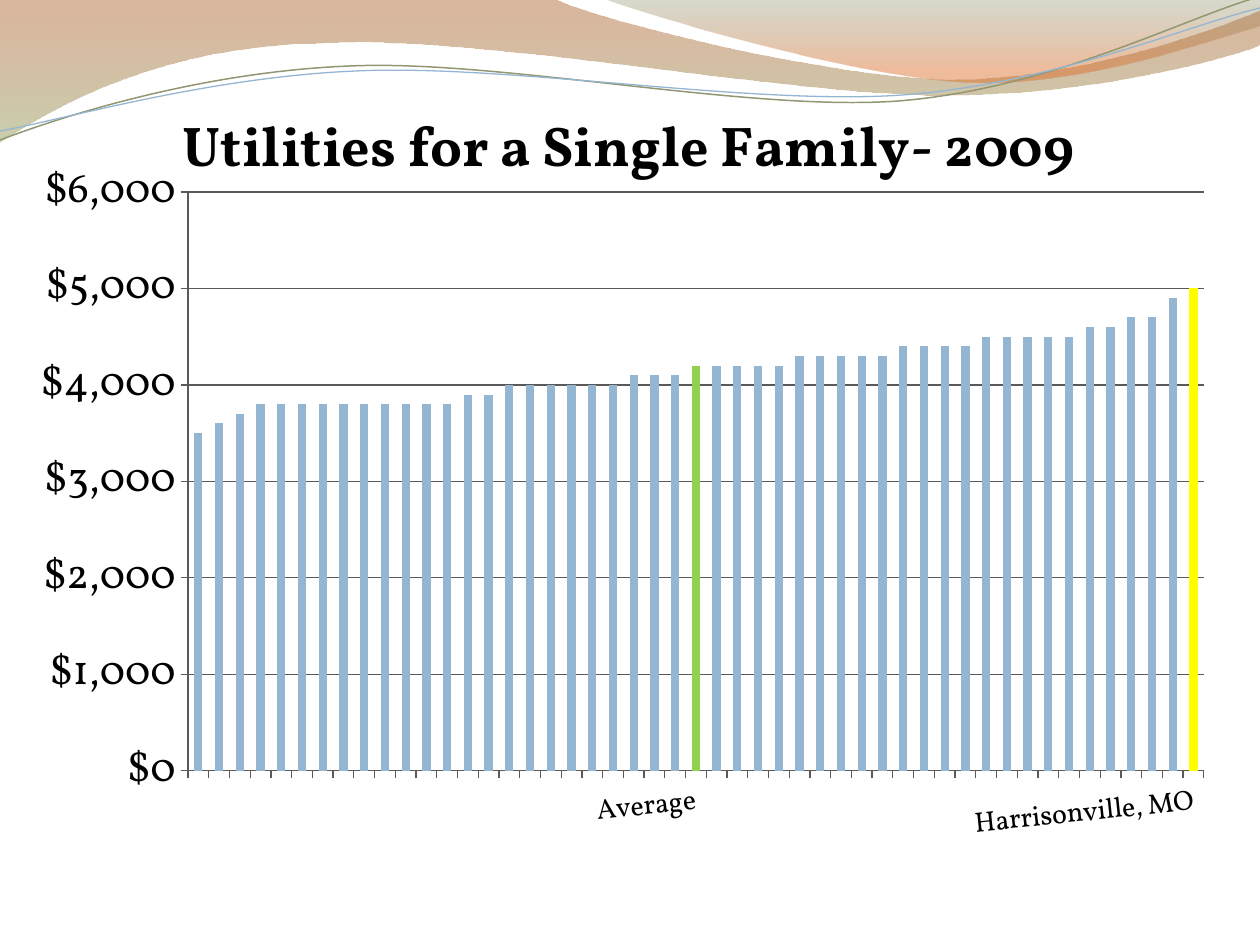
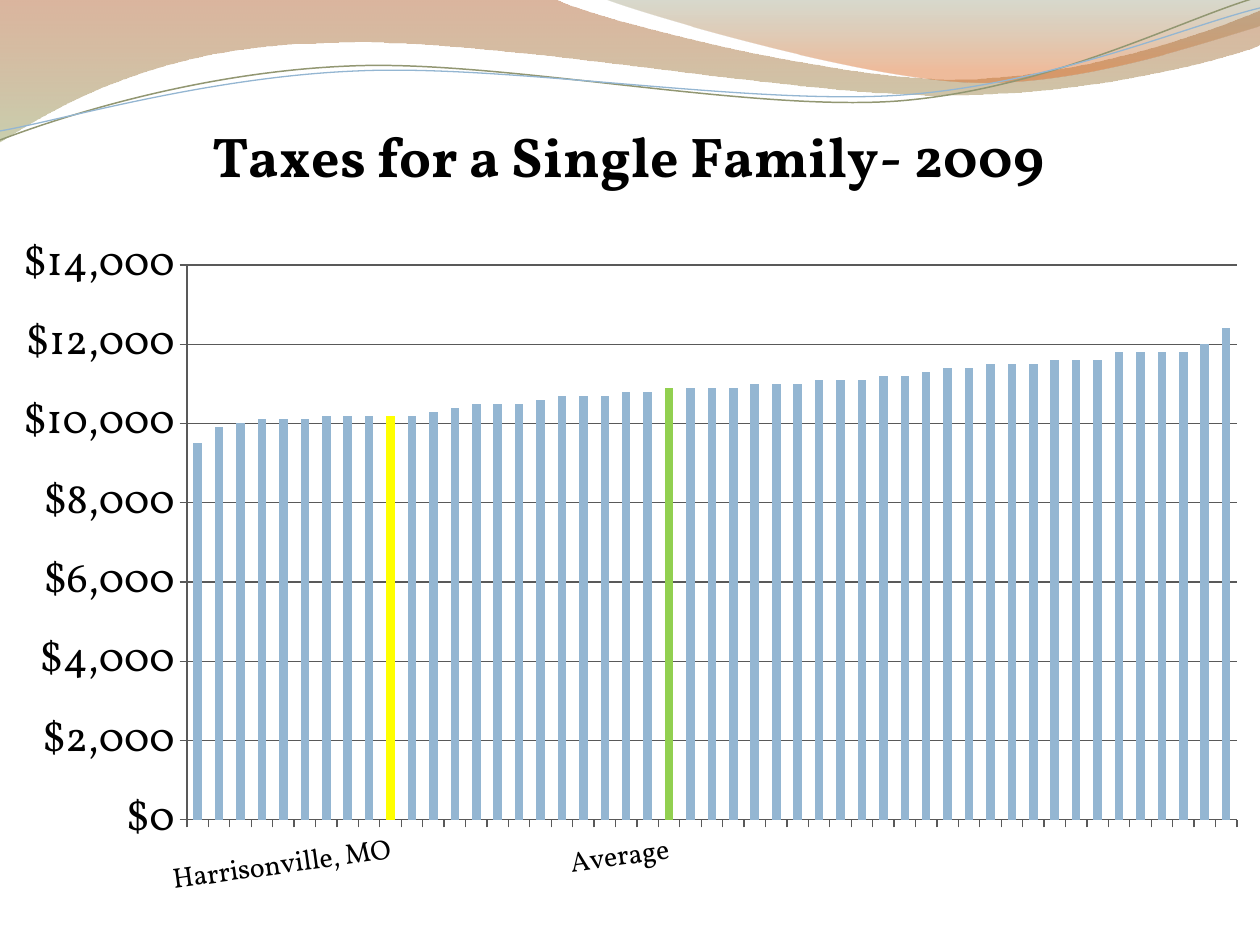
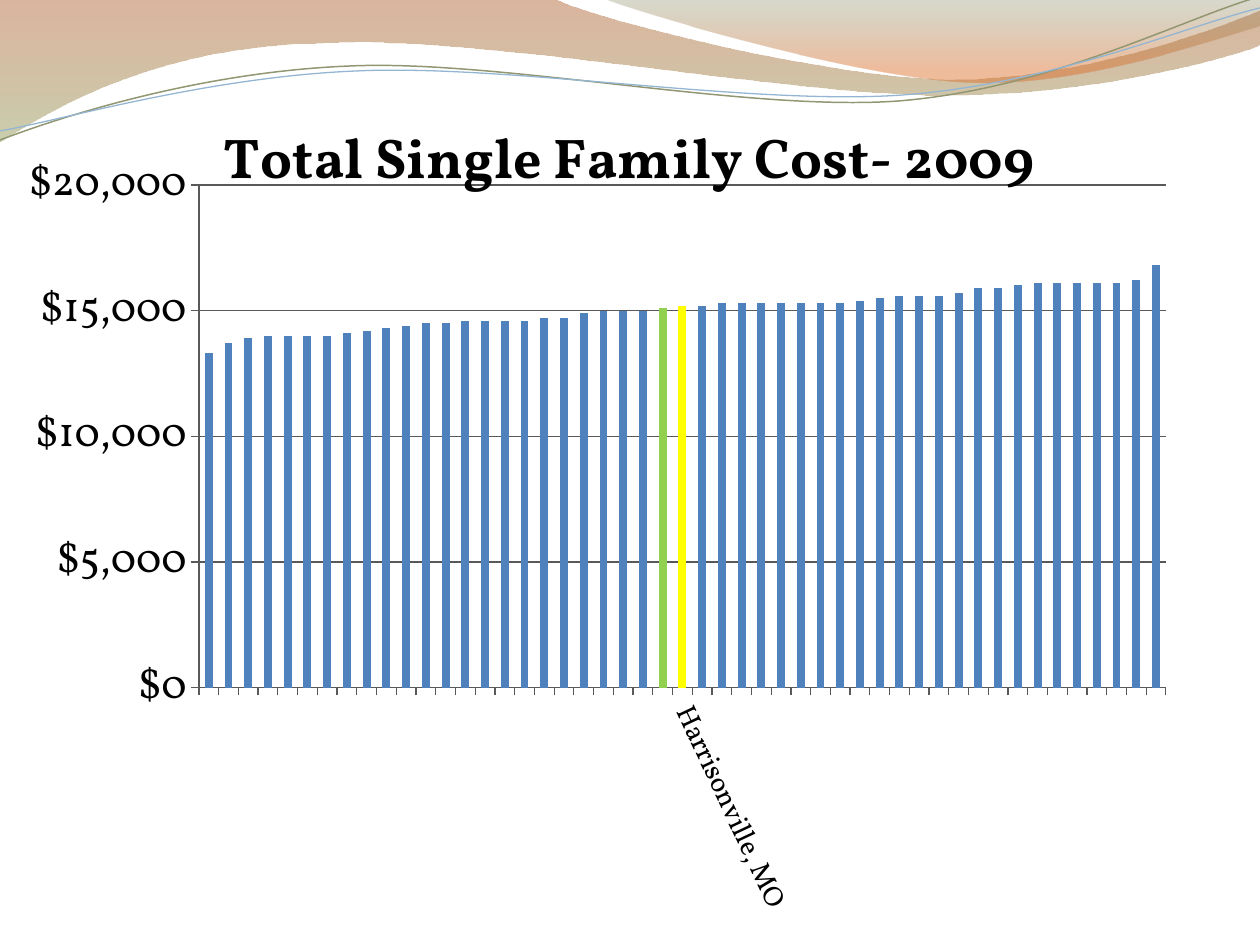
"""Build three household cost slides with a shared wave header."""
from pptx import Presentation
from pptx.chart.data import CategoryChartData
from pptx.dml.color import RGBColor
from pptx.enum.chart import XL_CHART_TYPE as ChartType, XL_TICK_MARK as TickMark
from pptx.oxml import parse_xml
from pptx.oxml.ns import nsdecls, qn
from pptx.oxml.xmlchemy import OxmlElement
from pptx.util import Pt

EMU_PER_PX = 914400 / 126
FONT = "Vollkorn"
BLACK, AXIS = "000000", "595959"
LIGHT_BLUE, BLUE, GREEN, YELLOW = "94B6D2", "4F81BD", "92D050", "FFFF00"
BAR_COUNT = 49
TOWN, AVERAGE = "Harrisonville, MO", "Average"
HIGHLIGHTS = {TOWN: YELLOW, AVERAGE: GREEN}

BANDS = [
    dict(
        start=(0, 0),
        segments=[
            [(554, -1)],
            [(600, 21), (837, 79), (955, 79)],
            [(1075, 79), (1207, 33), (1260, 11)],
            [(1261, 45)],
            [(1239, 55), (1096, 96), (940, 95)],
            [(784, 95), (481, 35), (324, 43)],
            [(163, 45), (58, 105), (-1, 142)],
        ],
        stops=[(0, "AF5C29", 45), (1, "9DA66B", 55)],
    ),
    dict(
        start=(604, -1),
        segments=[
            [(641, 14), (859, 78), (969, 82)],
            [(1079, 87), (1211, 40), (1260, 26)],
            [(1260, 0)],
        ],
        stops=[(0, "7D835B", 30), (0.8, "DD6B24", 45)],
    ),
]
WAVES = [
    dict(
        start=(0, 140),
        segments=[
            [(60, 117), (199, 72), (349, 66)],
            [(498, 59), (747, 112), (898, 101)],
            [(1050, 89), (1182, 19), (1258, -3)],
        ],
        color="929772", width=0.85,
    ),
    dict(
        start=(0, 131),
        segments=[
            [(59, 121), (207, 77), (357, 71)],
            [(508, 64), (752, 106), (903, 95)],
            [(1053, 84), (1186, 26), (1260, 8)],
        ],
        color="94B6D2", width=0.75,
    ),
]

CHARTS = [
    dict(
        title="Utilities for a Single Family- 2009",
        box=(-5, 73, 1269, 829), plot=(188, 192, 1016, 579),
        labels={24: AVERAGE, 48: TOWN}, color=LIGHT_BLUE,
        top=6000, step=1000, rotation=-6,
        hundreds=[35, 36, 37, 38, 38, 38, 38, 38, 38, 38, 38, 38, 38, 39, 39, 40, 40,
                  40, 40, 40, 40, 41, 41, 41, 42, 42, 42, 42, 42, 43, 43, 43, 43, 43,
                  44, 44, 44, 44, 45, 45, 45, 45, 45, 46, 46, 47, 47, 49, 50],
    ),
    dict(
        title="Taxes for a Single Family- 2009",
        box=(-3, 84, 1264, 829), plot=(187, 265, 1050, 555),
        labels={9: TOWN, 22: AVERAGE}, color=LIGHT_BLUE,
        top=14000, step=2000, rotation=-8,
        hundreds=[95, 99, 100, 101, 101, 101, 102, 102, 102, 102, 102, 103, 104, 105,
                  105, 105, 106, 107, 107, 107, 108, 108, 109, 109, 109, 109, 110, 110,
                  110, 111, 111, 111, 112, 112, 113, 114, 114, 115, 115, 115, 116, 116,
                  116, 118, 118, 118, 118, 120, 124],
    ),
    dict(
        title="Total Single Family Cost- 2009",
        box=(0, 84, 1260, 861), plot=(199, 185, 967, 503),
        labels={23: AVERAGE, 24: TOWN}, color=BLUE,
        top=20000, step=5000, rotation=65,
        hundreds=[133, 137, 139, 140, 140, 140, 140, 141, 142, 143, 144, 145, 145, 146,
                  146, 146, 146, 147, 147, 149, 150, 150, 150, 151, 152, 152, 153, 153,
                  153, 153, 153, 153, 153, 154, 155, 156, 156, 156, 157, 159, 159, 160,
                  161, 161, 161, 161, 161, 162, 168],
    ),
]


def px(length):
    return round(length * EMU_PER_PX)


def rgb(color):
    return RGBColor.from_string(color)


def format_font(font, size, color=BLACK, bold=False):
    font.name, font.size, font.bold = FONT, Pt(size), bold
    font.color.rgb = rgb(color)


def write_text(text_frame, text, **font_format):
    paragraph = text_frame.paragraphs[0]
    run = paragraph.add_run()
    run.text = text
    format_font(run.font, **font_format)


def format_line(line, color, width):
    line.color.rgb = rgb(color)
    line.width = Pt(width)


def clear_area():
    return parse_xml(
        f'<c:spPr {nsdecls("c", "a")}><a:noFill/><a:ln><a:noFill/></a:ln></c:spPr>')


class Deck:
    """Hold the presentation, its layout and the current slide."""

    def __init__(self):
        self.presentation = Presentation()
        self.presentation.slide_width = px(1260)
        self.presentation.slide_height = px(945)
        self.layout = self.presentation.slide_layouts[6]
        self.slide = None

    def add_slide(self):
        self.slide = self.presentation.slides.add_slide(self.layout)

    def outline(self, start, segments, close):
        builder = self.slide.shapes.build_freeform(px(start[0]), px(start[1]))
        builder.add_line_segments(
            [(px(x), px(y)) for segment in segments for x, y in segment], close=close)
        shape = builder.convert_to_shape()
        shape.shadow.inherit = False
        lines = iter(list(shape.element.iter(qn("a:lnTo"))))
        for segment in segments:
            first = next(lines)
            if len(segment) == 3:
                curve = OxmlElement("a:cubicBezTo")
                first.addprevious(curve)
                for line in (first, next(lines), next(lines)):
                    curve.append(line[0])
                    line.getparent().remove(line)
        return shape

    def band(self, start, segments, stops):
        shape = self.outline(start, segments, close=True)
        shape.line.fill.background()
        shape.fill.gradient()
        shape.fill.gradient_angle = 270
        for stop, (position, color, _) in zip(shape.fill.gradient_stops, stops):
            stop.position = position
            stop.color.rgb = rgb(color)
        colors = shape.element.spPr.iter(qn("a:srgbClr"))
        for element, (_, _, opacity) in zip(list(colors), stops):
            alpha = OxmlElement("a:alpha")
            alpha.set("val", str(opacity * 1000))
            element.append(alpha)
        return shape

    def wave(self, start, segments, color, width):
        shape = self.outline(start, segments, close=False)
        shape.fill.background()
        format_line(shape.line, color, width)
        return shape

    def header(self):
        for placeholder in list(self.layout.placeholders):
            placeholder.element.getparent().remove(placeholder.element)
        shapes = [self.band(**band) for band in BANDS]
        shapes += [self.wave(**wave) for wave in WAVES]
        for shape in shapes:
            self.layout.shapes.element.append(shape.element)

    def column_chart(self, title, box, plot, labels, color, top, step, rotation, hundreds):
        data = CategoryChartData()
        data.categories = [labels.get(index, "") for index in range(BAR_COUNT)]
        data.add_series("Series 1", [value * 100 for value in hundreds])
        chart = self.slide.shapes.add_chart(
            ChartType.COLUMN_CLUSTERED, *map(px, box), data).chart
        chart.has_legend = False
        format_font(chart.font, 10)
        chart.has_title = True
        write_text(chart.chart_title.text_frame, title, size=32, bold=True)

        bars = chart.plots[0]
        bars.gap_width = 150
        bars.vary_by_categories = False
        series = bars.series[0]
        series.format.fill.solid()
        series.format.fill.fore_color.rgb = rgb(color)
        for index, label in labels.items():
            fill = series.points[index].format.fill
            fill.solid()
            fill.fore_color.rgb = rgb(HIGHLIGHTS[label])

        for axis, size in ((chart.category_axis, 16), (chart.value_axis, 24)):
            axis.major_tick_mark = TickMark.OUTSIDE
            axis.minor_tick_mark = TickMark.NONE
            format_line(axis.format.line, AXIS, 0.75)
            format_font(axis.tick_labels.font, size)
        values = chart.value_axis
        values.minimum_scale, values.maximum_scale, values.major_unit = 0, top, step
        values.tick_labels.number_format = '"$"#,##0'
        values.tick_labels.number_format_is_linked = False
        values.has_major_gridlines = True
        format_line(values.major_gridlines.format.line, AXIS, 0.75)
        category_axis = chart.element.find(".//" + qn("c:catAx"))
        category_axis.find(".//" + qn("a:bodyPr")).set("rot", str(rotation * 60000))
        self.place_plot(chart, box, plot)

    def place_plot(self, chart, box, plot):
        area = chart.element.find(".//" + qn("c:plotArea"))
        for layout in area.findall(qn("c:layout")):
            area.remove(layout)
        left, top, width, height = box
        settings = [
            ("layoutTarget", "inner"), ("xMode", "edge"), ("yMode", "edge"),
            ("x", round((plot[0] - left) / width, 4)),
            ("y", round((plot[1] - top) / height, 4)),
            ("w", round(plot[2] / width, 4)),
            ("h", round(plot[3] / height, 4)),
        ]
        children = "".join(f'<c:{name} val="{value}"/>' for name, value in settings)
        area.insert(0, parse_xml(
            f'<c:layout {nsdecls("c")}><c:manualLayout>{children}'
            '</c:manualLayout></c:layout>'))
        area.append(clear_area())
        chart.element.find(qn("c:chart")).addnext(clear_area())


def main():
    deck = Deck()
    for number, chart in enumerate(CHARTS):
        deck.add_slide()
        if number == 0:
            deck.header()
        deck.column_chart(**chart)
    deck.presentation.save("out.pptx")


if __name__ == "__main__":
    main()
